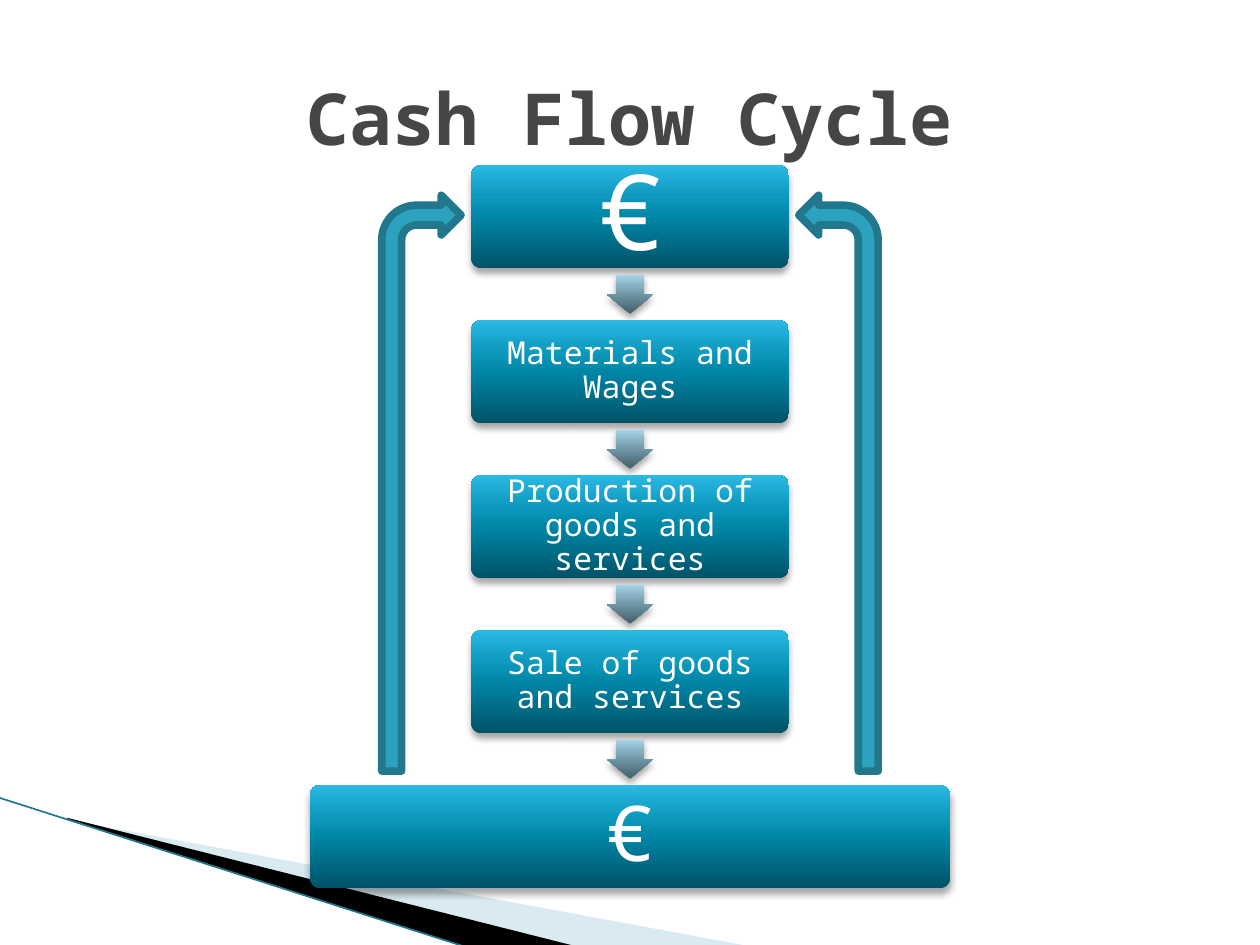
from pptx import Presentation
from pptx.dml.color import RGBColor
from pptx.enum import shapes, text
from pptx.oxml.ns import qn
from pptx.util import Inches, Pt
from lxml import etree

FONT = "Noto Sans Mono"
BOX_STOPS = [(0, "005367"), (50, "0086A7"), (70, "0E9ABE"), (100, "2CB9E3")]
ARROW_STOPS = [(0, "445E68"), (50, "6F96A7"), (70, "86AFC1"), (100, "A6D5E9")]
SHAPE = shapes.MSO_SHAPE


def paint(color_format, value):
    color_format.rgb = RGBColor.from_string(value)


def add_color(parent, value, alpha=None):
    color = etree.SubElement(parent, qn("a:srgbClr"), val=value)
    if alpha is not None:
        etree.SubElement(color, qn("a:alpha"), val=str(alpha * 1000))


def fill_solid(shape, value, alpha=None):
    shape.fill.solid()
    paint(shape.fill.fore_color, value)
    if alpha is not None:
        color = shape.fill._xPr.find(".//" + qn("a:srgbClr"))
        etree.SubElement(color, qn("a:alpha"), val=str(alpha * 1000))


def fill_glossy(shape, stops):
    """Upright gradient, dark at the bottom, with a soft shadow below."""
    shape.fill.gradient()
    shape.fill.gradient_angle = 90
    shape.line.fill.background()
    shape.shadow.inherit = False
    properties = shape._element.spPr
    gradient = properties.find(qn("a:gradFill"))
    gradient.set("rotWithShape", "0")
    stop_list = gradient.find(qn("a:gsLst"))
    for stop in list(stop_list):
        stop_list.remove(stop)
    for position, value in stops:
        stop = etree.SubElement(stop_list, qn("a:gs"), pos=str(position * 1000))
        add_color(stop, value)
    shadow = etree.SubElement(
        properties.find(qn("a:effectLst")), qn("a:outerShdw"),
        blurRad=str(Pt(4)), dist=str(Pt(3)), dir="5400000", rotWithShape="0")
    add_color(shadow, "000000", 35)


def write(frame, words, size, color, bold=False):
    frame.word_wrap = True
    frame.vertical_anchor = text.MSO_ANCHOR.MIDDLE
    paragraph = frame.paragraphs[0]
    paragraph.alignment = text.PP_ALIGN.CENTER
    run = paragraph.add_run()
    run.text = words
    run.font.name, run.font.size, run.font.bold = FONT, Pt(size), bold
    paint(run.font.color, color)
    return paragraph


def add_corner_ribbon(slide, left, top):
    """Sweeping wedges and edge line; left and top give the line's start."""
    def wedge(points, value, alpha=None):
        (x, y), *rest = [(Inches(left + px), Inches(top + py)) for px, py in points]
        builder = slide.shapes.build_freeform(x, y)
        builder.add_line_segments(rest, close=True)
        shape = builder.convert_to_shape()
        fill_solid(shape, value, alpha)
        shape.line.fill.background()
        shape.shadow.inherit = False

    wedge([(0.56, 0.18), (5.96, 1.18), (4.57, 1.18), (0.56, 0.17)], "A0CBDC", 40)
    wedge([(0.54, 0.16), (4.58, 1.18), (3.73, 1.19), (0.55, 0.17)], "000000")
    edge = slide.shapes.add_connector(
        shapes.MSO_CONNECTOR.STRAIGHT, Inches(left), Inches(top),
        Inches(left + 3.72), Inches(top + 1.19))
    paint(edge.line.color, "21788D")
    edge.line.width = Pt(0.95)
    etree.SubElement(edge._element.spPr, qn("a:effectLst"))


def add_step(slide, left, top, width, height, words, size):
    step = slide.shapes.add_shape(
        SHAPE.ROUNDED_RECTANGLE, Inches(left), Inches(top), Inches(width), Inches(height))
    step.adjustments[0] = 0.1
    fill_glossy(step, BOX_STOPS)
    frame = step.text_frame
    frame.margin_left = frame.margin_right = Inches(0.1)
    frame.margin_top = frame.margin_bottom = Inches(0.1)
    write(frame, words, size, "FFFFFF").line_spacing = 0.9


def add_down_arrow(slide, center_x, center_y):
    length, breadth = 0.31, 0.37
    arrow = slide.shapes.add_shape(
        SHAPE.RIGHT_ARROW, Inches(center_x - length / 2), Inches(center_y - breadth / 2),
        Inches(length), Inches(breadth))
    arrow.rotation = 90
    arrow.adjustments[0], arrow.adjustments[1] = 0.6, 0.5
    fill_glossy(arrow, ARROW_STOPS)


def add_return_arrow(slide, left, top, width, height, mirrored):
    arrow = slide.shapes.add_shape(
        SHAPE.BENT_ARROW, Inches(left), Inches(top), Inches(width), Inches(height))
    fill_solid(arrow, "2DA2BF")
    paint(arrow.line.color, "21788D")
    arrow.line.width = Pt(4.33)
    arrow.shadow.inherit = False
    if mirrored:
        arrow._element.spPr.find(qn("a:xfrm")).set("flipH", "1")


def add_cycle(slide, left, top, width, height):
    """Column of steps joined by arrows, with a return arrow on each side."""
    step_width, step_height, pitch = 2.52, 0.82, 1.23
    center = left + width / 2
    steps = [("€", 60), ("Materials and Wages", 18),
             ("Production of goods and services", 18),
             ("Sale of goods and services", 18), ("€", 44)]
    last = len(steps) - 1
    for index, (words, size) in enumerate(steps):
        y = top + index * pitch
        box_width = width if index == last else step_width
        add_step(slide, center - box_width / 2, y, box_width, step_height, words, size)
        if index < last:
            add_down_arrow(slide, center, y + (step_height + pitch) / 2)

    return_width, gap = 0.63, 0.08
    offset = step_width / 2 + gap
    for x, mirrored in ((center - offset - return_width, False), (center + offset, True)):
        add_return_arrow(slide, x, top + 0.24, return_width, height - 1.17, mirrored)


def add_title(slide, left, top, width, height):
    title = slide.shapes.title
    title.left, title.top = Inches(left), Inches(top)
    title.width, title.height = Inches(width), Inches(height)
    write(title.text_frame, "Cash Flow Cycle", 41, "464646", bold=True)


def main():
    deck = Presentation()
    deck.slide_width, deck.slide_height = Inches(10), Inches(7.5)
    slide = deck.slides.add_slide(deck.slide_layouts[5])
    add_corner_ribbon(slide, -0.01, 6.33)
    add_title(slide, 0.5, 0.3, 9, 1.25)
    add_cycle(slide, 2.46, 1.31, 5.08, 5.74)
    deck.save("out.pptx")


if __name__ == "__main__":
    main()
